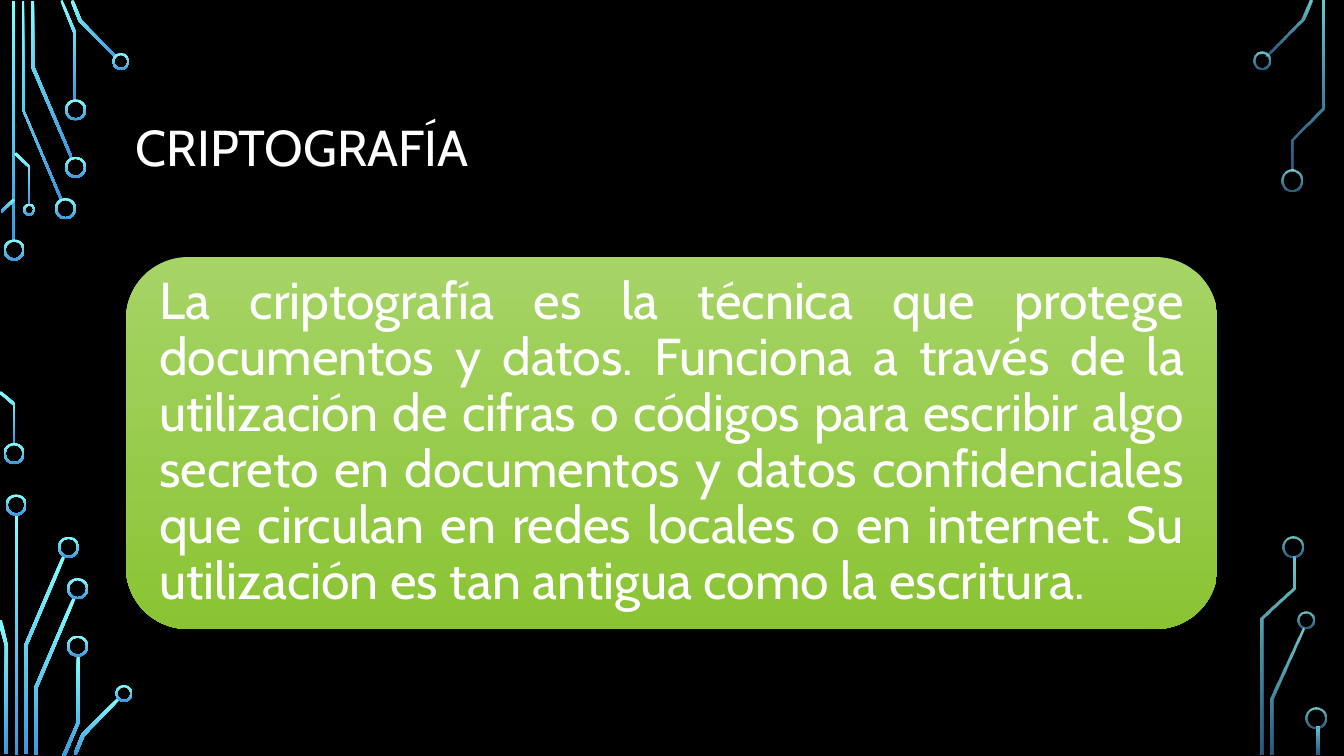
"""Build the slide on cryptography with its circuit-trace border."""
from dataclasses import dataclass

from lxml import etree
from pptx import Presentation
from pptx.dml.color import RGBColor
from pptx.enum.shapes import MSO_SHAPE
from pptx.enum.text import MSO_ANCHOR, PP_ALIGN
from pptx.oxml.ns import qn
from pptx.util import Cm, Pt

RECT, ROUND_RECT, DONUT = MSO_SHAPE.RECTANGLE, MSO_SHAPE.ROUNDED_RECTANGLE, MSO_SHAPE.DONUT
MIDDLE, LEFT, JUSTIFY = MSO_ANCHOR.MIDDLE, PP_ALIGN.LEFT, PP_ALIGN.JUSTIFY

TITLE = "CRIPTOGRAFÍA"
BODY = (
    "La criptografía es la técnica que protege documentos y datos. "
    "Funciona a través de la utilización de cifras o códigos para escribir "
    "algo secreto en documentos y datos confidenciales que circulan en "
    "redes locales o en internet. Su utilización es tan antigua como la escritura."
)

LEFT_BARS = [(0.12, 0.01, 0.03, 2.39), (0.15, 5.1, 0.03, 2.39)]
LEFT_RINGS = [
    (0.14, 2.48, 0.21), (0.14, 4.5, 0.21), (0.65, 2.07, 0.21), (0.75, 1.66, 0.21),
    (0.75, 1.09, 0.21), (1.2, 0.61, 0.17), (0.29, 2.08, 0.12), (0.16, 5.01, 0.21),
    (0.68, 5.43, 0.21), (0.77, 5.84, 0.21), (0.77, 6.41, 0.21), (1.23, 6.88, 0.17),
]
LEFT_TRACES = [
    [(0.6, 1.99), (0.22, 1.09), (0.22, 0.01), (0.24, 0.01), (0.24, 1.09), (0.62, 1.98)],
    [(0.7, 1.57), (0.31, 0.67), (0.31, 0.01), (0.34, 0.01), (0.34, 0.66), (0.72, 1.56)],
    [(0.76, 1), (0.73, 1), (0.73, 0.33), (0.6, 0.01), (0.62, 0), (0.76, 0.33)],
    [(1.15, 0.58), (0.78, 0.21), (0.7, 0.01), (0.73, 0), (0.81, 0.2), (1.16, 0.56)],
    [(0.02, 2.11), (0.01, 2.09), (0.13, 1.97), (0.15, 1.99)],
    [(0.15, 4.41), (0.13, 4.41), (0.13, 4.02), (-0.01, 3.9), (0.01, 3.88), (0.15, 4)],
    [(0.3, 2.03), (0.28, 2.03), (0.28, 1.66), (0.14, 1.53), (0.16, 1.51), (0.3, 1.65)],
    [(0.27, 7.48), (0.24, 7.48), (0.24, 6.4), (0.62, 5.51), (0.65, 5.52), (0.27, 6.41)],
    [(0.08, 7.48), (0.05, 7.48), (0.05, 6.41), (-0.02, 6.16), (0.02, 6.15), (0.08, 6.41)],
    [(0.37, 7.49), (0.34, 7.49), (0.34, 6.82), (0.72, 5.93), (0.75, 5.94), (0.37, 6.83)],
    [(0.65, 7.5), (0.62, 7.49), (0.76, 7.17), (0.76, 6.5), (0.79, 6.5), (0.79, 7.17)],
    [(0.76, 7.49), (0.73, 7.48), (0.81, 7.28), (1.17, 6.92), (1.19, 6.94), (0.84, 7.3)],
]

RIGHT_BARS = [(13.06, 7.21, 0.03, 0.28)]
RIGHT_RINGS = [
    (12.52, 0.6, 0.17), (12.82, 1.79, 0.21), (12.96, 6.15, 0.17),
    (12.83, 5.43, 0.21), (13.06, 7.12, 0.21),
]
RIGHT_TRACES = [
    [(12.58, 0.56), (12.56, 0.55), (12.91, 0.19), (12.99, 0), (13.02, 0.01), (12.94, 0.2)],
    [(12.64, 7.49), (12.61, 7.49), (12.61, 6.93), (12.92, 6.23), (12.94, 6.24), (12.64, 6.94)],
    [(12.83, 1.69), (12.81, 1.69), (12.81, 1.38), (13.11, 1.07), (13.11, 0.01),
     (13.14, 0.01), (13.14, 1.08), (12.83, 1.39)],
    [(12.54, 7.49), (12.51, 7.49), (12.51, 6.13), (12.82, 5.83), (12.82, 5.52),
     (12.85, 5.52), (12.85, 5.84), (12.54, 6.14)],
]


@dataclass(frozen=True)
class Theme:
    """Hold the colours, gradients, font and type sizes."""

    background: str = "000000"
    text: str = "FFFFFF"
    circuit: tuple = ("82FFFF", "3D97DE")
    panel: tuple = ("A6D467", "8AC433")
    faded: tuple = (80, 60)
    font: str = "Cabin"
    title_size: int = 36
    body_size: int = 37
    line_spacing: float = 0.9
    ring_width: float = 0.02


def cm(inches):
    """Turn inches into a length."""
    return Cm(2.54 * inches)


def write(tf, text, *, theme, size, align=LEFT, inset=(0.1, 0.05)):
    """Put one formatted paragraph into a text frame."""
    tf.word_wrap = True
    tf.vertical_anchor = MIDDLE
    tf.margin_left = tf.margin_right = cm(inset[0])
    tf.margin_top = tf.margin_bottom = cm(inset[1])
    p = tf.paragraphs[0]
    p.alignment = align
    p.line_spacing = theme.line_spacing
    r = p.add_run()
    r.text = text
    r.font.name = theme.font
    r.font.size = Pt(size)
    r.font.color.rgb = RGBColor.from_string(theme.text)


class SlideBuilder:
    """Draw elements on one slide in one theme."""

    def __init__(self, slide, theme):
        """Keep the slide and theme and paint the background."""
        self.slide, self.theme = slide, theme
        fill = slide.background.fill
        fill.solid()
        fill.fore_color.rgb = RGBColor.from_string(theme.background)

    def paint(self, sp, colors, opacity=None):
        """Give a shape a downward gradient without line or shadow."""
        sp.shadow.inherit = False
        sp.line.fill.background()
        sp.fill.gradient()
        sp.fill.gradient_angle = 270
        for stop, color in zip(sp.fill.gradient_stops, colors):
            stop.color.rgb = RGBColor.from_string(color)
        if opacity:
            for clr, percent in zip(sp._element.spPr.iter(qn("a:srgbClr")), opacity):
                etree.SubElement(clr, qn("a:alpha")).set("val", str(percent * 1000))

    def shape(self, kind, box, colors, opacity=None):
        """Add a preset shape with a gradient."""
        sp = self.slide.shapes.add_shape(kind, *map(cm, box))
        self.paint(sp, colors, opacity)
        return sp

    def ring(self, x, y, size, opacity=None):
        """Add a circuit terminal centred on a point."""
        box = (x - size / 2, y - size / 2, size, size)
        sp = self.shape(DONUT, box, self.theme.circuit, opacity)
        sp.adjustments[0] = self.theme.ring_width / size

    def trace(self, outline, opacity=None):
        """Add a bent circuit trace from its outline."""
        start, *rest = [(cm(x), cm(y)) for x, y in outline]
        builder = self.slide.shapes.build_freeform(*start)
        builder.add_line_segments(rest, close=True)
        self.paint(builder.convert_to_shape(), self.theme.circuit, opacity)

    def circuit(self, bars, traces, rings, opacity=None):
        """Add one side of the circuit border."""
        for bar in bars:
            self.shape(RECT, bar, self.theme.circuit, opacity)
        for outline in traces:
            self.trace(outline, opacity)
        for ring in rings:
            self.ring(*ring, opacity=opacity)

    def text(self, box, text, **style):
        """Add a text box."""
        sp = self.slide.shapes.add_textbox(*map(cm, box))
        write(sp.text_frame, text, theme=self.theme, **style)


def main():
    """Build and save the slide."""
    theme = Theme()
    prs = Presentation()
    prs.slide_width, prs.slide_height = Cm(33.87), Cm(19.05)
    s = SlideBuilder(prs.slides.add_slide(prs.slide_layouts[6]), theme)
    s.circuit(LEFT_BARS, LEFT_TRACES, LEFT_RINGS)
    s.circuit(RIGHT_BARS, RIGHT_TRACES, RIGHT_RINGS, theme.faded)
    s.text((1.25, 0.68, 10.83, 1.62), TITLE, size=theme.title_size)
    s.shape(ROUND_RECT, (1.25, 2.55, 10.83, 3.69), theme.panel)
    s.text((1.43, 2.73, 10.47, 3.33), BODY, size=theme.body_size,
           align=JUSTIFY, inset=(0.15, 0.15))
    prs.save("out.pptx")


if __name__ == "__main__":
    main()
